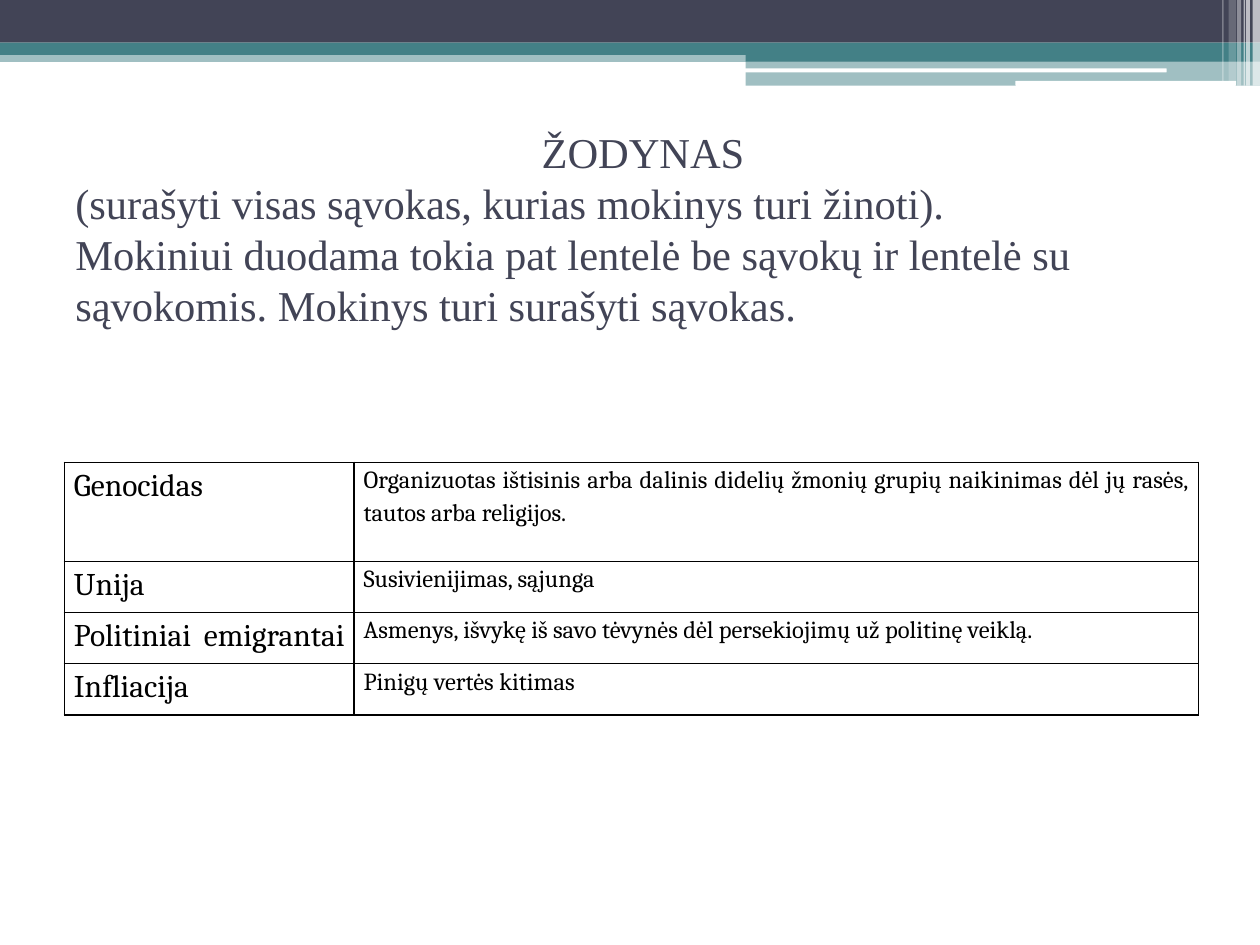
import pptx
import pptx.dml.color
import pptx.enum.shapes
import pptx.enum.text
import pptx.oxml.ns
import pptx.util
from lxml import etree

Cm = pptx.util.Cm
Pt = pptx.util.Pt
SHAPES = pptx.enum.shapes.MSO_SHAPE
ALIGN = pptx.enum.text.PP_ALIGN

NAVY, TEAL, WHITE, BLACK = "424456", "438086", "FFFFFF", "000000"

# Header bands: left, top, width, height (cm), colour, opacity %
BANDS = [
    (0, 1.02, 25.4, 0.23, TEAL, 50),
    (0, 0, 25.4, 0.86, NAVY, 100),
    (0, 0.86, 25.4, 0.25, TEAL, 100),
    (15.03, 0.99, 10.37, 0.25, TEAL, 100),
    (15.03, 1.23, 10.37, 0.5, TEAL, 50),
]
ROUNDED_LINES = [
    (15.01, 1.38, 8.51, 0.08, WHITE, 100),
    (20.47, 1.63, 4.45, 0.1, WHITE, 100),
]
# Vertical stripes at the right edge: left, width, height (cm), opacity %
STRIPES = [
    (25.25, 0.15, 1.73, 65),
    (25.12, 0.08, 1.73, 65),
    (25.07, 0.03, 1.73, 60),
    (24.94, 0.08, 1.73, 40),
    (24.77, 0.15, 1.63, 20),
    (24.64, 0.03, 1.63, 30),
]

# Title lines with their first-line indent (cm)
TITLE = [
    ("ŽODYNAS", 9.4),
    ("(surašyti visas sąvokas, kurias mokinys turi žinoti).", 0),
    ("Mokiniui duodama tokia pat lentelė be sąvokų ir lentelė su sąvokomis. "
     "Mokinys turi surašyti sąvokas.", 0),
]

GLOSSARY = [
    ("Genocidas ", "Organizuotas ištisinis arba dalinis didelių žmonių grupių "
                   "naikinimas dėl jų rasės, tautos arba religijos."),
    ("Unija ", "Susivienijimas, sąjunga"),
    ("Politiniai emigrantai ", "Asmenys, išvykę iš savo tėvynės dėl persekiojimų "
                               "už politinę veiklą."),
    ("Infliacija ", "Pinigų vertės kitimas"),
]
COLUMN_WIDTHS = (5.84, 17.02)
COLUMN_SIZES = (18, 14)
ROW_HEIGHTS = (2, 1.03, 1.03, 1.03)


def color(hex_string):
    return pptx.dml.color.RGBColor.from_string(hex_string)


def add_band(slide, kind, left, top, width, height, fill, opacity):
    shape = slide.shapes.add_shape(kind, Cm(left), Cm(top), Cm(width), Cm(height))
    shape.shadow.inherit = False
    shape.line.fill.background()
    shape.fill.solid()
    shape.fill.fore_color.rgb = color(fill)
    if opacity < 100:
        fill_color = shape.fill._xPr.find(".//" + pptx.oxml.ns.qn("a:srgbClr"))
        etree.SubElement(fill_color, pptx.oxml.ns.qn("a:alpha"), val=str(opacity * 1000))


def style(paragraph, name, size, hex_string):
    paragraph.font.name = name
    paragraph.font.size = Pt(size)
    paragraph.font.color.rgb = color(hex_string)


def add_borders(cell):
    properties = cell._tc.get_or_add_tcPr()
    for position, side in enumerate(("lnL", "lnR", "lnT", "lnB")):
        line = etree.Element(pptx.oxml.ns.qn("a:" + side), w=str(Pt(1)))
        fill = etree.SubElement(line, pptx.oxml.ns.qn("a:solidFill"))
        etree.SubElement(fill, pptx.oxml.ns.qn("a:srgbClr"), val=BLACK)
        properties.insert(position, line)


def add_title(slide):
    box = slide.shapes.add_textbox(Cm(1.27), Cm(2.54), Cm(22.86), Cm(6))
    frame = box.text_frame
    frame.word_wrap = True
    frame.margin_top = frame.margin_bottom = 0
    for index, (text, indent) in enumerate(TITLE):
        paragraph = frame.add_paragraph() if index else frame.paragraphs[0]
        paragraph.text = text
        paragraph.line_spacing = Pt(29.15)
        style(paragraph, "Times New Roman", 24.3, NAVY)
        if indent:
            paragraph._p.get_or_add_pPr().set("indent", str(Cm(indent)))


def add_glossary(slide):
    frame = slide.shapes.add_table(
        len(GLOSSARY), len(COLUMN_WIDTHS), Cm(1.3), Cm(9.32),
        Cm(sum(COLUMN_WIDTHS)), Cm(sum(ROW_HEIGHTS)))
    table = frame.table
    table.first_row = table.horz_banding = False
    for column, width in zip(table.columns, COLUMN_WIDTHS):
        column.width = Cm(width)
    for row, height, texts in zip(table.rows, ROW_HEIGHTS, GLOSSARY):
        row.height = Cm(height)
        for cell, text, size in zip(row.cells, texts, COLUMN_SIZES):
            cell.fill.background()
            cell.margin_left = cell.margin_right = Cm(0.19)
            cell.margin_top = cell.margin_bottom = 0
            paragraph = cell.text_frame.paragraphs[0]
            paragraph.text = text
            paragraph.alignment = ALIGN.JUSTIFY
            paragraph.line_spacing = 1.15
            style(paragraph, "Cambria", size, BLACK)
            add_borders(cell)


def main():
    presentation = pptx.Presentation()
    presentation.slide_width = Cm(25.4)
    presentation.slide_height = Cm(19.05)
    slide = presentation.slides.add_slide(presentation.slide_layouts[6])

    # Header decoration
    for band in BANDS:
        add_band(slide, SHAPES.RECTANGLE, *band)
    for line in ROUNDED_LINES:
        add_band(slide, SHAPES.ROUNDED_RECTANGLE, *line)
    for left, width, height, opacity in STRIPES:
        add_band(slide, SHAPES.RECTANGLE, left, 0, width, height, WHITE, opacity)

    # Title and glossary table
    add_title(slide)
    add_glossary(slide)
    presentation.save("out.pptx")


if __name__ == "__main__":
    main()
